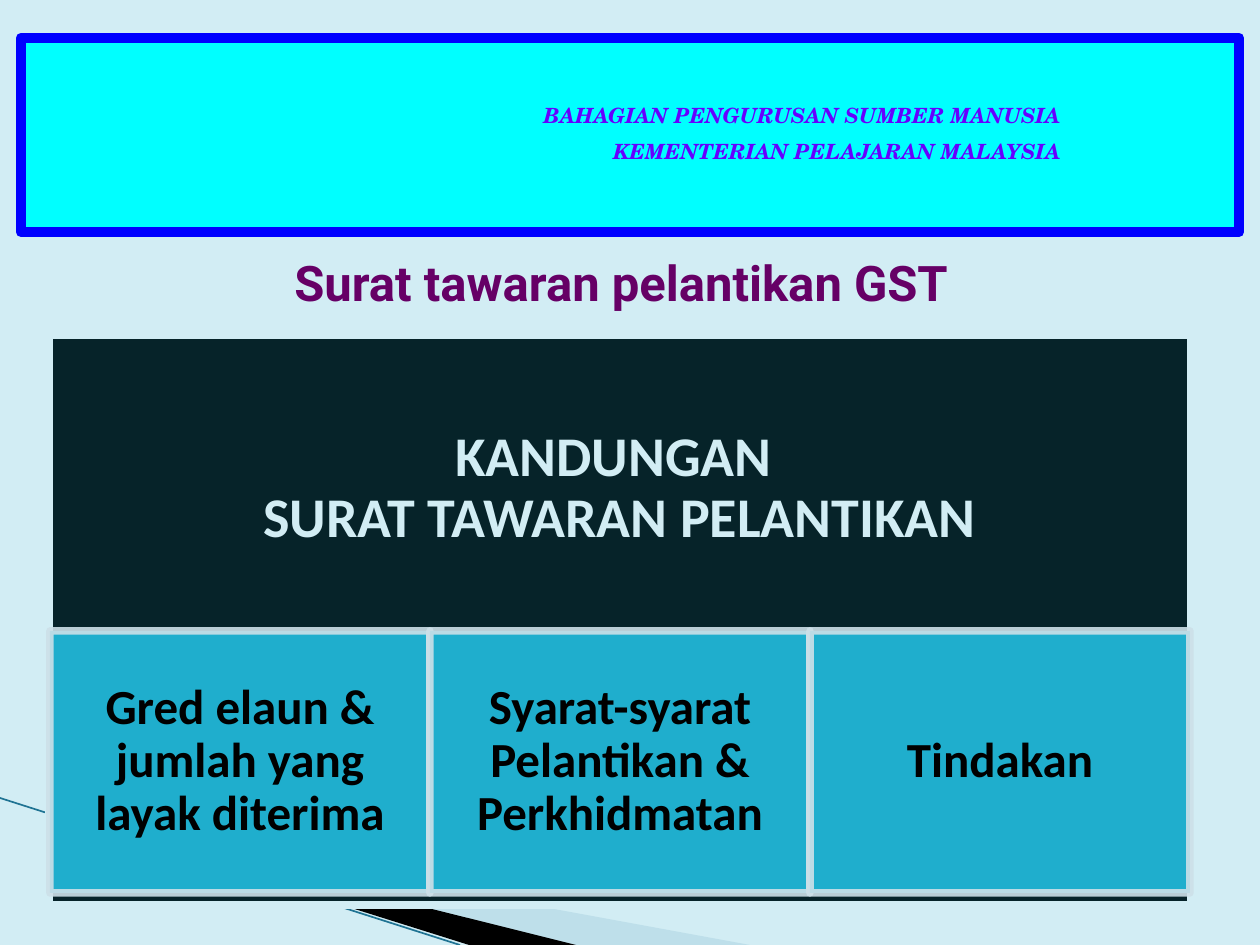
from lxml.etree import SubElement
from pptx import Presentation
from pptx.dml.color import RGBColor
from pptx.enum.shapes import MSO_CONNECTOR, MSO_SHAPE
from pptx.enum.text import MSO_ANCHOR, MSO_AUTO_SIZE, PP_ALIGN
from pptx.oxml.ns import qn
from pptx.util import Pt

PX = 914400 / 126
COLORS = {
    "bg": "D2EDF4", "pale": "A0CBDC", "black": "000000", "edge": "1F7393",
    "cyan": "00FFFF", "blue": "0000FF", "violet": "6600FF", "purple": "660066",
    "dark": "062329", "teal": "1FAECD", "border": "CDE0E8",
}


def paint(fill, color, alpha=None):
    fill.solid()
    fill.fore_color.rgb = RGBColor.from_string(COLORS[color])
    if alpha:
        clr = fill._xPr.find(qn("a:solidFill"))[0]
        SubElement(clr, qn("a:alpha")).set("val", str(alpha * 1000))


def write(tf, lines, font, size, color, align, insets, anchor, before=0, spacing=None, italic=None):
    tf.word_wrap = True
    tf.auto_size = MSO_AUTO_SIZE.NONE
    tf.vertical_anchor = anchor
    tf.margin_left, tf.margin_top, tf.margin_right, tf.margin_bottom = [int(i * PX) for i in insets]
    for i, line in enumerate(lines):
        p = tf.add_paragraph() if i else tf.paragraphs[0]
        p.alignment = align
        p.space_before = Pt(before if i else 0)
        if spacing:
            p.line_spacing = spacing
        r = p.add_run()
        r.text = line
        r.font.name = font
        r.font.size = Pt(size)
        r.font.bold = True
        r.font.italic = italic
        r.font.color.rgb = RGBColor.from_string(COLORS[color])


prs = Presentation()
prs.slide_width, prs.slide_height = int(1260 * PX), int(945 * PX)
s = prs.slides.add_slide(prs.slide_layouts[5])
paint(s.background.fill, "bg")

wedges = [
    ([(69, 820), (750, 945), (575, 945), (69, 819)], "pale", 40),
    ([(67, 818), (576, 945), (469, 945), (68, 819)], "black", None),
]
for points, color, alpha in wedges:
    fb = s.shapes.build_freeform(*points[0], scale=PX)
    fb.add_line_segments(points[1:], close=True)
    sp = fb.convert_to_shape()
    sp.shadow.inherit = False
    sp.line.fill.background()
    paint(sp.fill, color, alpha)

cx = s.shapes.add_connector(MSO_CONNECTOR.STRAIGHT, 0, int(798 * PX), int(460 * PX), int(945 * PX))
cx.line.width = Pt(0.95)
paint(cx.line.fill, "edge")
SubElement(cx._element.spPr, qn("a:effectLst"))

boxes = [
    ((21, 38, 1218, 194), "cyan", "blue", 6, None, None),
    ((49, 335, 1142, 570), "dark", "bg", 4.33, None,
     (["KANDUNGAN ", "SURAT TAWARAN PELANTIKAN"], "Calibri", 32, "bg", (32, 32, 32, 294))),
]
cells = ["Gred elaun & jumlah yang layak diterima", "Syarat-syarat Pelantikan & Perkhidmatan", "Tindakan"]
for i, cell in enumerate(cells):
    boxes.append(((50 + 380 * i, 631, 380, 262), "teal", "border", 4.33, 90,
                  ([cell], "Calibri", 28, "black", (28, 5, 28, 5))))

for place, fill, line, width, alpha, text in boxes:
    sp = s.shapes.add_shape(MSO_SHAPE.RECTANGLE, *[int(v * PX) for v in place])
    sp.shadow.inherit = False
    paint(sp.fill, fill)
    sp.line.width = Pt(width)
    paint(sp.line.fill, line, alpha)
    if text:
        lines, font, size, color, insets = text
        write(sp.text_frame, lines, font, size, color, PP_ALIGN.CENTER, insets,
              MSO_ANCHOR.MIDDLE, spacing=0.9)

tb = s.shapes.add_textbox(*[int(v * PX) for v in (445, 97, 635, 78)])
write(tb.text_frame, ["BAHAGIAN PENGURUSAN SUMBER MANUSIA ", "KEMENTERIAN PELAJARAN MALAYSIA "],
      "TeX Gyre Schola", 12, "violet", PP_ALIGN.RIGHT, (13, 6, 13, 6), MSO_ANCHOR.TOP,
      before=6, italic=True)

title = s.shapes.title
title.left, title.top, title.width, title.height = [int(v * PX) for v in (49, 246, 1144, 72)]
write(title.text_frame, ["Surat tawaran pelantikan GST"], "Roboto", 28, "purple",
      PP_ALIGN.CENTER, (13, 6, 13, 6), MSO_ANCHOR.TOP)

prs.save("out.pptx")
